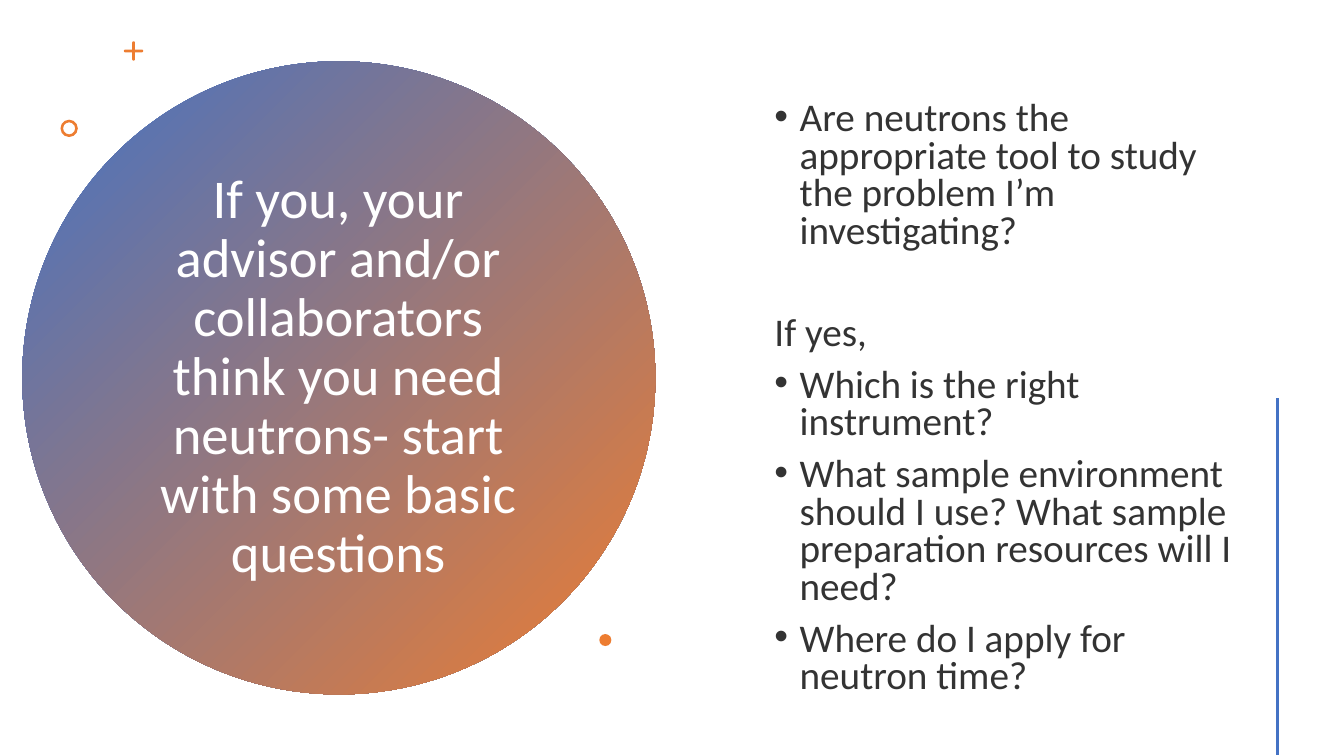
import math
import pptx
import pptx.util
import pptx.dml.color
import pptx.enum.shapes
import pptx.enum.text
import pptx.oxml

Pt = pptx.util.Pt
SHAPE = pptx.enum.shapes.MSO_SHAPE
ANCHOR = pptx.enum.text.MSO_ANCHOR
ALIGN = pptx.enum.text.PP_ALIGN

TITLE = ("If you, your advisor and/or collaborators think you need "
         "neutrons- start with some basic questions")
# text, bulleted, space before
QUESTIONS = [
    ("Are neutrons the appropriate tool to study the problem I’m investigating?", True, 0),
    ("If yes,", False, 46),
    ("Which is the right instrument?", True, 10),
    ("What sample environment should I use? What sample preparation resources will I need?", True, 10),
    ("Where do I apply for neutron time?", True, 10),
]
THEME = {
    "font": "Calibri",
    "blue": "4472C4", "orange": "ED7D31", "white": "FFFFFF", "text": "333333",
    "title_size": 39, "body_size": 28, "line_width": 2,
}
SLIDE_SIZE = (960, 540)
DISC = {"center": (242, 269.9), "size": 452.2}
RING = {"center": (49.4, 91.7), "size": 12.4}
DOT = {"center": (432.4, 457.2), "size": 8.6}
PLUS = {"center": (95.4, 36.4), "size": 13.8}
STROKE = 1.9
TITLE_BOX = (97.9, 101.5, 287.3, 336.2)
BODY_BOX = (546, 72.4, 349, 440)
RULE = (912.5, 284.4, 539.4)
BULLET_INDENT = 18


def rgb(name):
    return pptx.dml.color.RGBColor.from_string(THEME[name])


def set_all(target, values):
    for name, value in values.items():
        setattr(target, name, value)


def place(box, bounds):
    set_all(box, dict(zip(("left", "top", "width", "height"), map(Pt, bounds))))


def paint(shape):
    shape.shadow.inherit = False
    shape.line.fill.background()
    shape.fill.solid()
    shape.fill.fore_color.rgb = rgb("orange")


def add_round(slide, kind, mark):
    (x, y), size = mark["center"], mark["size"]
    shape = slide.shapes.add_shape(
        kind, Pt(x - size / 2), Pt(y - size / 2), Pt(size), Pt(size))
    paint(shape)
    return shape


def add_plus(slide):
    """Draw a plus sign whose four arms have round ends."""
    half = STROKE / 2
    reach = PLUS["size"] / 2 - half
    arm = [(reach + half * math.cos(math.radians(a)), half * math.sin(math.radians(a)))
           for a in range(-90, 91, 15)] + [(half, half)]
    points = []
    for _ in range(4):
        points += arm
        arm = [(-y, x) for x, y in arm]
    center_x, center_y = PLUS["center"]
    points = [(Pt(center_x + x), Pt(center_y + y)) for x, y in points]
    builder = slide.shapes.build_freeform(*points[0])
    builder.add_line_segments(points[1:], close=True)
    paint(builder.convert_to_shape())


def add_rule(slide):
    x, top, bottom = map(Pt, RULE)
    rule = slide.shapes.add_connector(
        pptx.enum.shapes.MSO_CONNECTOR.STRAIGHT, x, top, x, bottom)
    rule.line.color.rgb = rgb("blue")
    rule.line.width = Pt(THEME["line_width"])
    properties = rule.element.spPr
    properties.append(properties.makeelement(pptx.oxml.ns.qn("a:effectLst"), {}))


def set_bullet(para, bulleted):
    properties = para._p.get_or_add_pPr()
    indent = Pt(BULLET_INDENT) if bulleted else 0
    properties.set("marL", str(indent))
    properties.set("indent", str(-indent))
    tag, values = ("a:buChar", {"char": "•"}) if bulleted else ("a:buNone", {})
    properties.append(properties.makeelement(pptx.oxml.ns.qn(tag), values))


def write(para, text, size, color, layout):
    set_all(para, layout)
    span = para.add_run()
    span.text = text
    set_all(span.font, {"name": THEME["font"], "size": Pt(THEME[size])})
    span.font.color.rgb = rgb(color)


def fill_title(title):
    place(title, TITLE_BOX)
    set_all(title.text_frame, {
        "word_wrap": True, "vertical_anchor": ANCHOR.MIDDLE,
        "auto_size": pptx.enum.text.MSO_AUTO_SIZE.NONE})
    write(title.text_frame.paragraphs[0], TITLE, "title_size", "white",
          {"alignment": ALIGN.CENTER, "line_spacing": 0.9, "space_before": Pt(0)})


def fill_body(body):
    place(body, BODY_BOX)
    frame = body.text_frame
    set_all(frame, {
        "word_wrap": True, "vertical_anchor": ANCHOR.TOP, "margin_top": 0,
        "auto_size": pptx.enum.text.MSO_AUTO_SIZE.NONE})
    for number, (text, bulleted, gap) in enumerate(QUESTIONS):
        para = frame.add_paragraph() if number else frame.paragraphs[0]
        write(para, text, "body_size", "text",
              {"alignment": ALIGN.LEFT, "line_spacing": 0.8, "space_before": Pt(gap)})
        set_bullet(para, bulleted)


def main():
    deck = pptx.Presentation()
    deck.slide_width, deck.slide_height = map(Pt, SLIDE_SIZE)
    page = deck.slides.add_slide(deck.slide_layouts[1])
    title = page.shapes.title

    disc = add_round(page, SHAPE.OVAL, DISC)
    disc.fill.gradient()
    disc.fill.gradient_angle = 315
    for stop, position, color in zip(disc.fill.gradient_stops, (0, 1), ("blue", "orange")):
        stop.position = position
        stop.color.rgb = rgb(color)
    title.element.addprevious(disc.element)

    fill_title(title)
    fill_body(page.placeholders[1])
    add_plus(page)
    ring = add_round(page, SHAPE.DONUT, RING)
    ring.adjustments[0] = STROKE / RING["size"]
    add_round(page, SHAPE.OVAL, DOT)
    add_rule(page)
    deck.save("out.pptx")


if __name__ == "__main__":
    main()
